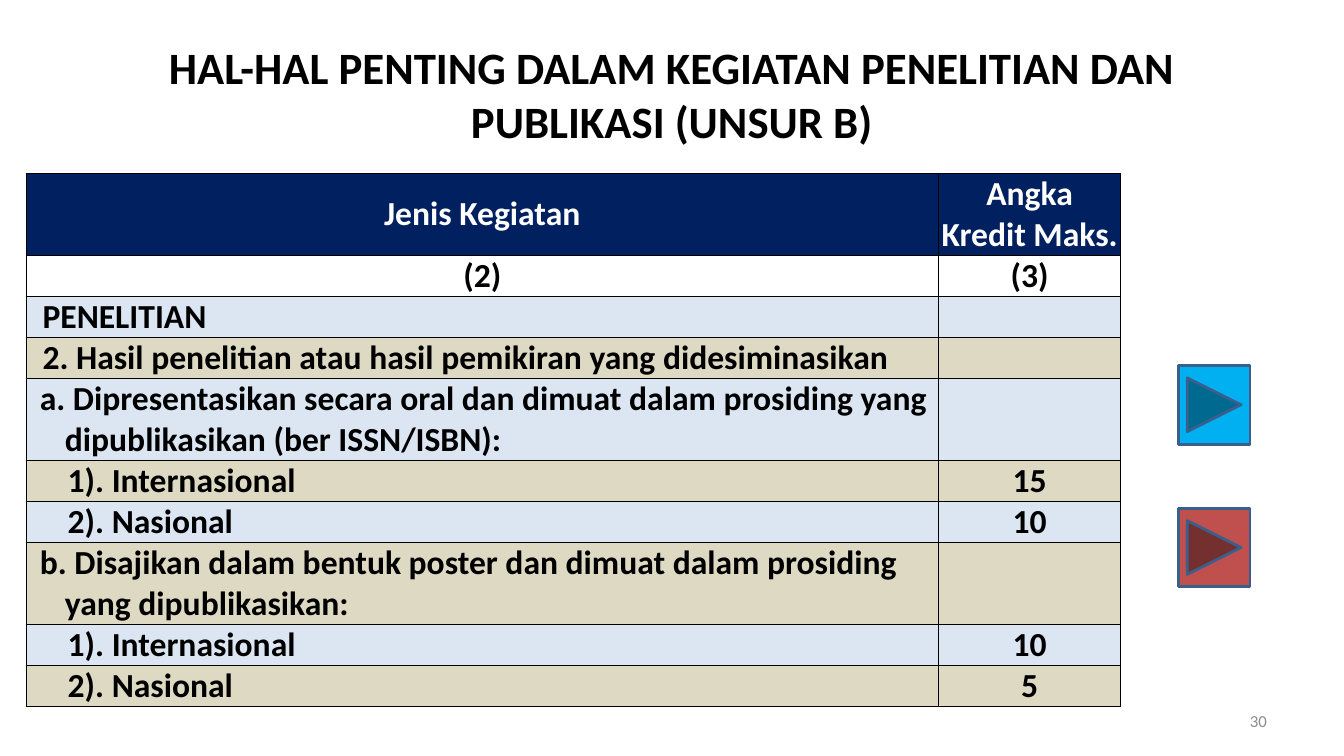
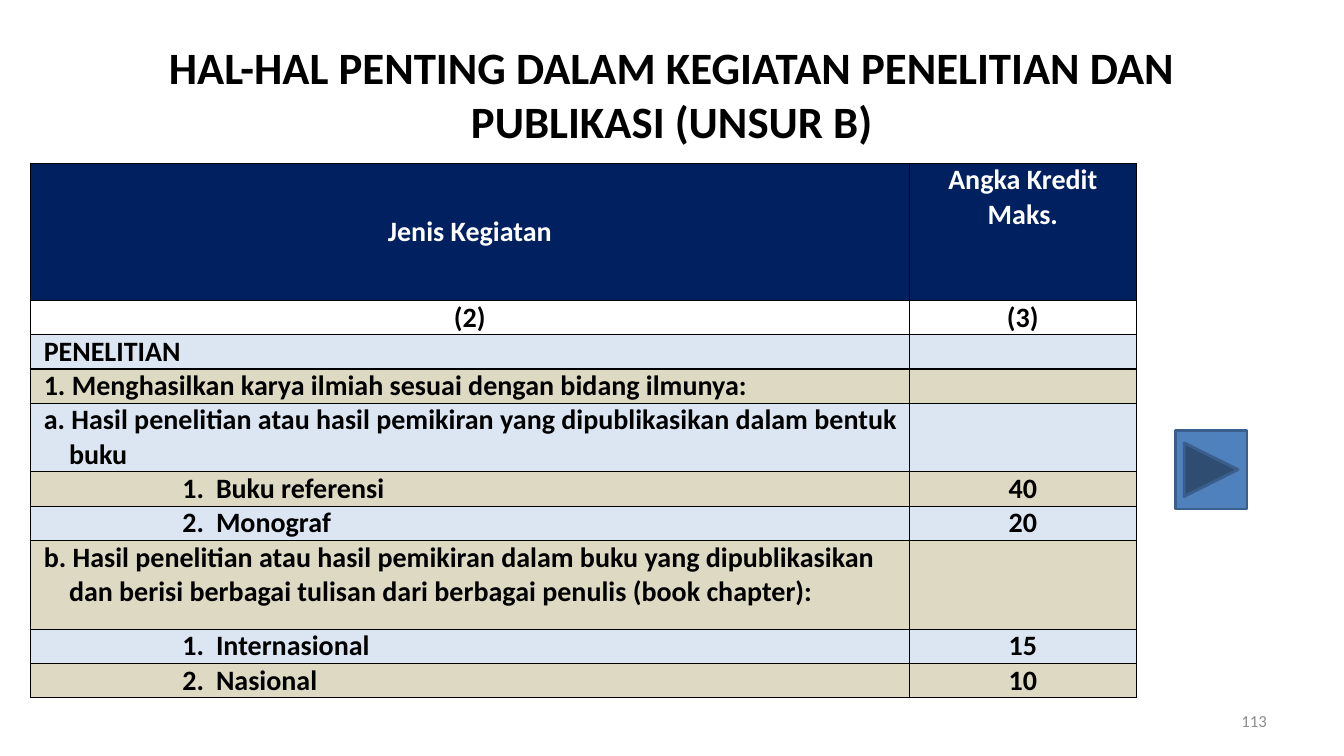
from pptx import Presentation
from pptx.dml.color import RGBColor
from pptx.enum.shapes import MSO_SHAPE
from pptx.enum.text import MSO_ANCHOR, MSO_AUTO_SIZE, PP_ALIGN
from pptx.oxml import parse_xml
from pptx.oxml.ns import nsdecls
from pptx.util import Pt

FONT = "Calibri"
BLACK = RGBColor(0x00, 0x00, 0x00)
WHITE = RGBColor(0xFF, 0xFF, 0xFF)
NAVY = RGBColor(0x00, 0x20, 0x60)
PALE_BLUE = RGBColor(0xDC, 0xE6, 0xF2)
BEIGE = RGBColor(0xDD, 0xD9, 0xC3)
GREY = RGBColor(0x8C, 0x8C, 0x8C)
CYAN = RGBColor(0x00, 0xB0, 0xF0)
RED = RGBColor(0xC0, 0x50, 0x4D)
BLUE = RGBColor(0x4F, 0x81, 0xBD)
BUTTON_LINE = RGBColor(0x3A, 0x5F, 0x8C)

TITLE = "HAL-HAL PENTING DALAM KEGIATAN PENELITIAN DAN PUBLIKASI (UNSUR B)"
HEADING, LETTER, ITEM = "heading", "letter", "item"


class Deck:
    """Holds the shared style and the slide being built."""

    def __init__(self):
        self.prs = Presentation()
        self.prs.slide_width, self.prs.slide_height = Pt(960), Pt(540)
        self.s = None

    def format_text(self, p, size, color, bold=False, align=PP_ALIGN.LEFT):
        p.alignment = align
        for r in p.runs:
            r.font.name = FONT
            r.font.size = Pt(size)
            r.font.bold = bold
            r.font.color.rgb = color

    def add_slide(self, number):
        self.s = self.prs.slides.add_slide(self.prs.slide_layouts[5])
        self.add_title()
        self.add_number(number)

    def add_title(self):
        sp = self.s.shapes.title
        sp.left, sp.top, sp.width, sp.height = Pt(48), Pt(21.6), Pt(864), Pt(90)
        tf = sp.text_frame
        tf.text = TITLE
        tf.word_wrap = True
        tf.auto_size = MSO_AUTO_SIZE.NONE
        tf.vertical_anchor = MSO_ANCHOR.MIDDLE
        self.format_text(tf.paragraphs[0], 32, BLACK, True, PP_ALIGN.CENTER)

    def add_number(self, number):
        sp = self.s.shapes.add_textbox(Pt(688), Pt(500.5), Pt(224), Pt(28.8))
        tf = sp.text_frame
        tf.word_wrap = True
        tf.text = str(number)
        tf.vertical_anchor = MSO_ANCHOR.MIDDLE
        self.format_text(tf.paragraphs[0], 12, GREY, align=PP_ALIGN.RIGHT)

    def add_button(self, left, top, color):
        sp = self.s.shapes.add_shape(MSO_SHAPE.ACTION_BUTTON_FORWARD_OR_NEXT,
                                     Pt(left), Pt(top), Pt(51.2), Pt(56.2))
        sp.shadow.inherit = False
        sp.fill.solid()
        sp.fill.fore_color.rgb = color
        sp.line.color.rgb = BUTTON_LINE
        sp.line.width = Pt(2)

    def add_borders(self, cell):
        tc_pr = cell._tc.get_or_add_tcPr()
        for side in ("lnL", "lnR", "lnT", "lnB"):
            tc_pr.append(parse_xml(
                f'<a:{side} {nsdecls("a")} w="{Pt(1)}"><a:solidFill>'
                f'<a:srgbClr val="{BLACK}"/></a:solidFill></a:{side}>'))

    def fill_cell(self, cell, text, size, fill, color, align, indent=(0, 0)):
        """Indent is (left margin, first line) in points."""
        cell.margin_left = cell.margin_right = Pt(0.7)
        cell.margin_top = cell.margin_bottom = 0
        self.add_borders(cell)
        cell.fill.solid()
        cell.fill.fore_color.rgb = fill
        cell.text_frame.text = text
        p = cell.text_frame.paragraphs[0]
        self.format_text(p, size, color, True, align)
        if not text:
            p.font.size = Pt(size)
        p_pr = p._p.get_or_add_pPr()
        p_pr.set("marL", str(Pt(indent[0])))
        p_pr.set("indent", str(Pt(indent[1])))

    def add_credit_table(self, left, top, widths, heights, size, credit_head, indents, rows):
        """Rows are (kind, activity, credit); indents maps a kind to its indent."""
        table = self.s.shapes.add_table(len(heights), 2, Pt(left), Pt(top),
                                        Pt(sum(widths)), Pt(sum(heights))).table
        table.first_row = table.horz_banding = False
        for column, width in zip(table.columns, widths):
            column.width = Pt(width)
        for row, height in zip(table.rows, heights):
            row.height = Pt(height)

        heads = [(("Jenis Kegiatan", credit_head), NAVY, WHITE),
                 (("(2)", "(3)"), WHITE, BLACK)]
        for i, (texts, fill, color) in enumerate(heads):
            for j, text in enumerate(texts):
                self.fill_cell(table.cell(i, j), text, size, fill, color, PP_ALIGN.CENTER)
        table.cell(0, 0).vertical_anchor = MSO_ANCHOR.MIDDLE

        for i, (kind, activity, credit) in enumerate(rows, len(heads)):
            fill = BEIGE if i % 2 else PALE_BLUE
            self.fill_cell(table.cell(i, 0), activity, size, fill, BLACK,
                           PP_ALIGN.LEFT, indents[kind])
            self.fill_cell(table.cell(i, 1), credit, size, fill, BLACK, PP_ALIGN.CENTER)


def build_dissemination(deck):
    deck.add_slide(30)
    line = 29.3
    deck.add_credit_table(
        18.7, 123.8, (651.6, 130.3),
        [line * n for n in (2, 1, 1, 1, 2, 1, 1, 2, 1, 1)], 24, "Angka\vKredit Maks.",
        {HEADING: (11, 0), LETTER: (27, -18), ITEM: (29, 0)},
        [(HEADING, "PENELITIAN", ""),
         (HEADING, "2. Hasil penelitian atau hasil pemikiran yang didesiminasikan", ""),
         (LETTER, "a. Dipresentasikan secara oral dan dimuat dalam prosiding yang "
                  "dipublikasikan (ber ISSN/ISBN):", ""),
         (ITEM, "1). Internasional", "15"),
         (ITEM, "2). Nasional", "10"),
         (LETTER, "b. Disajikan dalam bentuk poster dan dimuat dalam prosiding yang "
                  "dipublikasikan:", ""),
         (ITEM, "1). Internasional", "10"),
         (ITEM, "2). Nasional", "5")])
    deck.add_button(841.7, 261, CYAN)
    deck.add_button(841.7, 363, RED)


def build_books(deck):
    deck.add_slide(113)
    line = 24.5
    deck.add_credit_table(
        21.6, 116.6, (628, 162),
        [98, line, line, line, line * 2, line, line, 63.4, line, line], 20,
        "Angka Kredit Maks.",
        {HEADING: (9, 0), LETTER: (27, -18), ITEM: (132, -24)},
        [(HEADING, "PENELITIAN", ""),
         (HEADING, "1. Menghasilkan karya ilmiah sesuai dengan bidang ilmunya:", ""),
         (LETTER, "a. Hasil penelitian atau hasil pemikiran yang dipublikasikan dalam "
                  "bentuk buku", ""),
         (ITEM, "1.\tBuku referensi", "40"),
         (ITEM, "2.\tMonograf", "20"),
         (LETTER, "b. Hasil penelitian atau hasil pemikiran dalam buku yang dipublikasikan "
                  "dan berisi berbagai tulisan dari berbagai penulis (book chapter):", ""),
         (ITEM, "1.\tInternasional", "15"),
         (ITEM, "2.\tNasional", "10")])
    deck.add_button(839.5, 307.4, BLUE)


def main():
    deck = Deck()
    build_dissemination(deck)
    build_books(deck)
    deck.prs.save("out.pptx")


if __name__ == "__main__":
    main()
